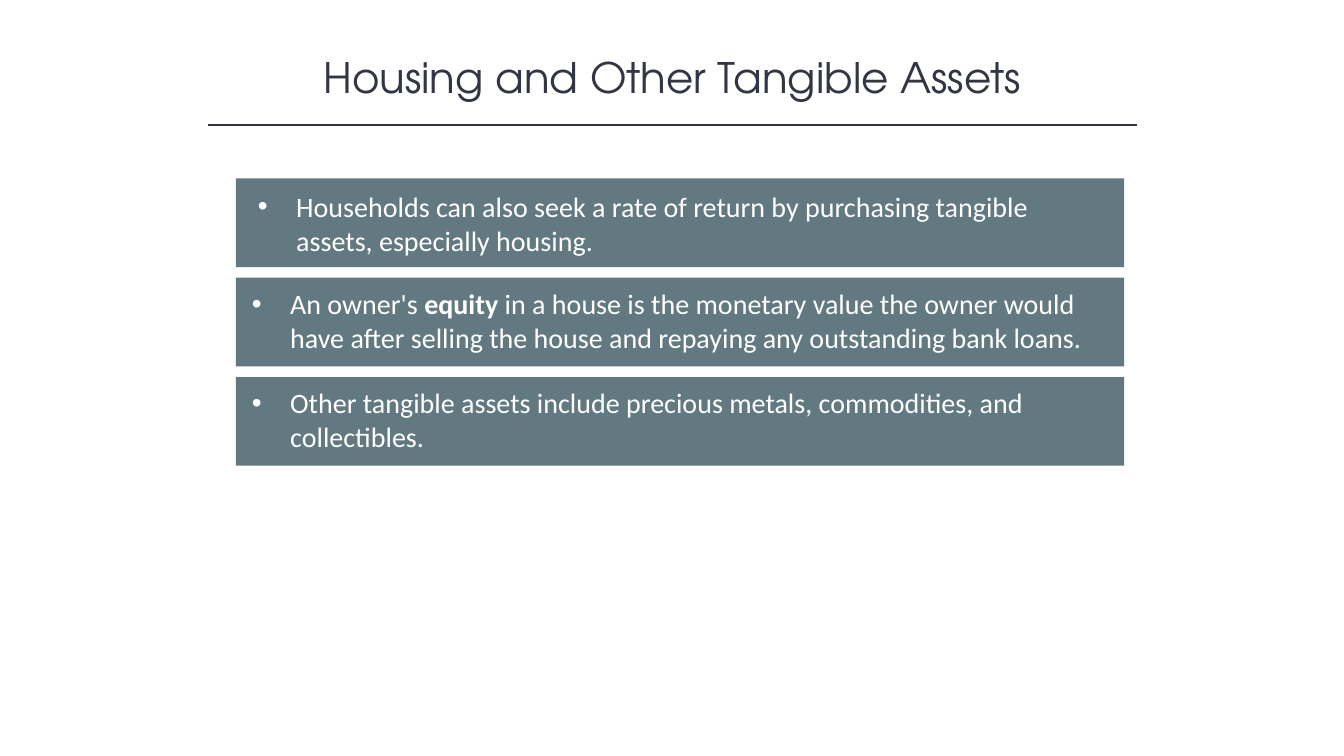
from lxml.etree import SubElement
from pptx import Presentation
from pptx.dml.color import RGBColor
from pptx.enum.shapes import MSO_CONNECTOR as CONNECTOR, MSO_SHAPE as SHAPE
from pptx.enum.text import MSO_ANCHOR as ANCHOR, MSO_AUTO_SIZE as AUTO_SIZE, PP_ALIGN as ALIGN
from pptx.oxml.ns import qn
from pptx.util import Inches, Pt

COLORS = {"ink": "323542", "bar": "627981", "white": "FFFFFF"}
TITLE_FONT = {"name": "TeX Gyre Adventor", "size": Pt(30), "bold": False}
BODY_FONT = {"name": "Calibri", "size": Pt(20)}
FRAME = {
    "word_wrap": True,
    "auto_size": AUTO_SIZE.SHAPE_TO_FIT_TEXT,
    "margin_left": Inches(0.1),
    "margin_right": Inches(0.1),
    "margin_top": Inches(0.05),
    "margin_bottom": Inches(0.05),
}

# Each bar: text offset inside the bar, then (text, bold) spans
BARS = [
    (0.12, 0.06, [("Households can also seek a rate of return by purchasing "
                   "tangible assets, especially housing.", False)]),
    (0.06, 0.04, [("An owner's ", False), ("equity", True),
                  (" in a house is the monetary value the owner would have after "
                   "selling the house and repaying any outstanding bank loans.", False)]),
    (0.06, 0.04, [("Other tangible assets include precious metals, commodities, "
                   "and collectibles.", False)]),
]
BAR_LEFT, BAR_WIDTH, BAR_HEIGHT = 2.34, 8.81, 0.88
FIRST_TOP, LAST_TOP = 1.77, 3.74


def apply_format(target, values):
    for name, value in values.items():
        setattr(target, name, value)


def color(name):
    return RGBColor.from_string(COLORS[name])


def add_span(para, text, font, color_name, **extra):
    span = para.add_run()
    span.text = text
    apply_format(span.font, {**font, **extra})
    span.font.color.rgb = color(color_name)


def add_title(page, text):
    title = page.shapes.title
    apply_format(title, {"left": Inches(1.67), "top": Inches(0.46),
                         "width": Inches(10), "height": Inches(0.61)})
    apply_format(title.text_frame, {**FRAME, "vertical_anchor": ANCHOR.MIDDLE})
    para = title.text_frame.paragraphs[0]
    para.alignment = ALIGN.CENTER
    add_span(para, text, TITLE_FONT, "ink")


def add_rule(page, left, right, top):
    rule = page.shapes.add_connector(
        CONNECTOR.STRAIGHT, Inches(left), Inches(top), Inches(right), Inches(top))
    rule.line.color.rgb = color("ink")
    rule.line.width = Pt(1)
    SubElement(rule._element.spPr, qn("a:effectLst"))


def add_box(group, left, top, width, height):
    box = group.shapes.add_shape(
        SHAPE.RECTANGLE, Inches(left), Inches(top), Inches(width), Inches(height))
    box.shadow.inherit = False
    box.fill.solid()
    box.fill.fore_color.rgb = color("bar")
    box.line.fill.background()
    return box


def set_bullet(para):
    props = para._p.get_or_add_pPr()
    props.set("marL", str(Inches(0.38)))
    props.set("indent", str(-Inches(0.38)))
    SubElement(props, qn("a:buFont"), typeface="Arial")
    SubElement(props, qn("a:buChar"), char="•")


def add_bar(page, top, offset_x, offset_y, spans):
    group = page.shapes.add_group_shape()
    add_box(group, BAR_LEFT, top, BAR_WIDTH, BAR_HEIGHT)
    label = add_box(group, BAR_LEFT + offset_x, top + offset_y, 8.54, 0.77)
    apply_format(label.text_frame, {**FRAME, "vertical_anchor": ANCHOR.TOP})
    para = label.text_frame.paragraphs[0]
    para.alignment = ALIGN.LEFT
    set_bullet(para)
    for text, bold in spans:
        add_span(para, text, BODY_FONT, "white", bold=bold)


def main():
    deck = Presentation()
    deck.slide_width, deck.slide_height = Inches(13.33), Inches(7.5)
    page = deck.slides.add_slide(deck.slide_layouts[5])

    # Heading
    add_title(page, "Housing and Other Tangible Assets")
    add_rule(page, 2.06, 11.28, 1.24)

    # Evenly spaced bars
    pitch = (LAST_TOP - FIRST_TOP) / (len(BARS) - 1)
    for index, (offset_x, offset_y, spans) in enumerate(BARS):
        add_bar(page, FIRST_TOP + index * pitch, offset_x, offset_y, spans)

    deck.save("out.pptx")


if __name__ == "__main__":
    main()
